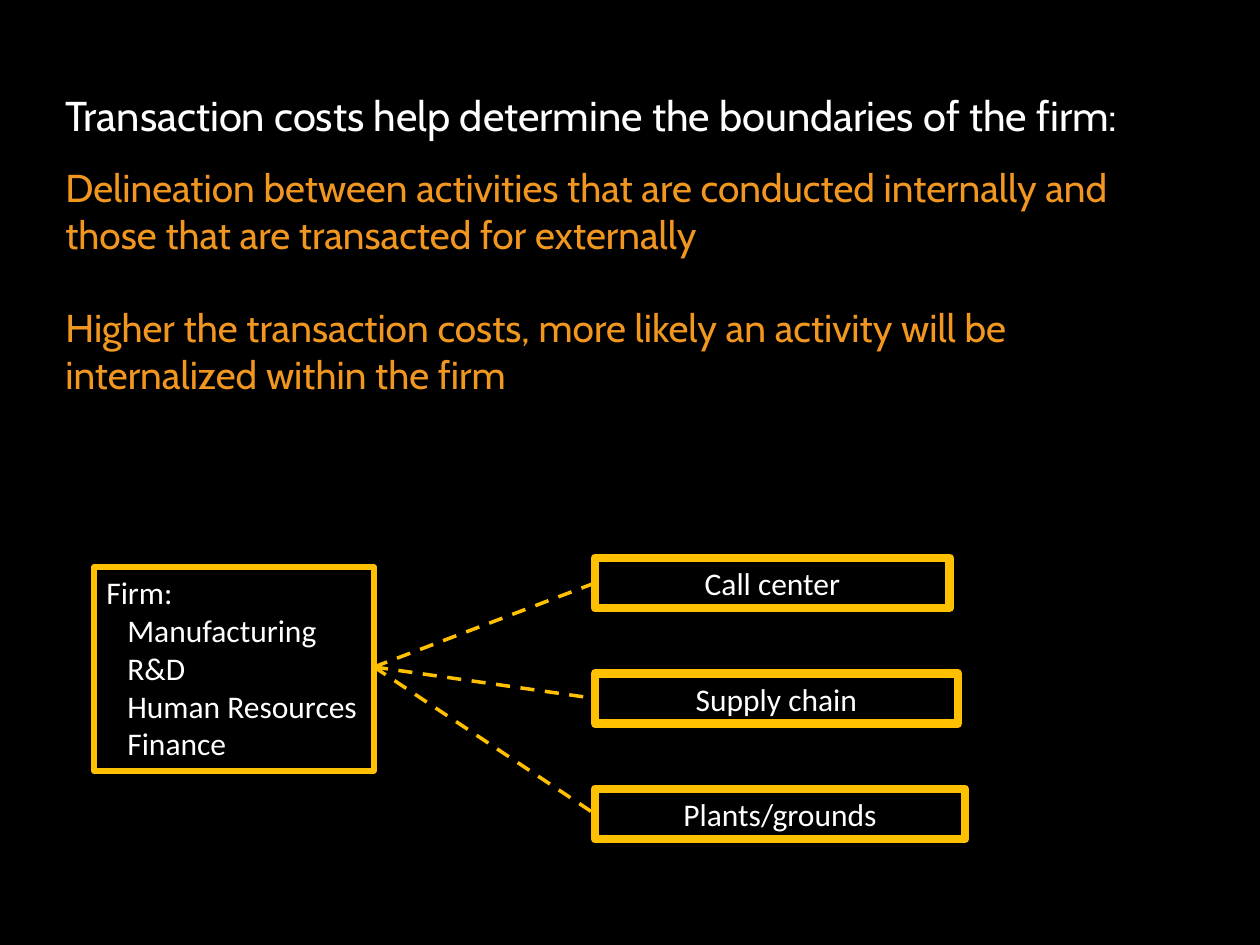
from pptx import Presentation
from pptx.dml.color import RGBColor
from pptx.enum.dml import MSO_LINE
from pptx.enum.shapes import MSO_CONNECTOR, MSO_SHAPE
from pptx.enum.text import MSO_ANCHOR, MSO_AUTO_SIZE, PP_ALIGN
from pptx.oxml.ns import qn
from pptx.util import Pt
from lxml.etree import SubElement

BLACK = RGBColor(0x00, 0x00, 0x00)
WHITE = RGBColor(0xFF, 0xFF, 0xFF)
GOLD = RGBColor(0xFF, 0xC0, 0x00)
ORANGE = RGBColor(0xF1, 0x97, 0x20)

TITLE = "Transaction costs help determine the boundaries of the firm:"
POINTS = [
    "Delineation between activities that are conducted internally and "
    "those that are transacted for externally",
    "Higher the transaction costs, more likely an activity will be "
    "internalized within the firm",
]
FIRM = ["Firm:", "Manufacturing", "R&D", "Human Resources", "Finance"]
OUTSIDE = [("Call center", 355), ("Supply chain", 363), ("Plants/grounds", 370)]

TITLE_FONT = {"name": "Cabin", "size": Pt(23.8), "color": WHITE}
POINT_FONT = {"name": "Cabin", "size": Pt(22.2), "color": ORANGE}
LABEL_FONT = {"name": "Calibri", "size": Pt(18), "color": WHITE}

TITLE_AT = (53, 84, 1155, 92)
POINTS_AT = (53, 158, 1102, 227)
FIRM_AT = (94, 567, 280, 204)
HUB = (374, 667)
LEFT, TOP, STEP, HEIGHT = 595, 558, 115.5, 50
INDENT = 21


def px(*vals):
    return [round(v * 914400 / 126) for v in vals]


def write(shape, lines, font, **frame):
    text = shape.text_frame
    for key, val in {"word_wrap": True, **frame}.items():
        setattr(text, key, val)
    text.text = "\n".join(lines)
    for para in text.paragraphs:
        for key, val in font.items():
            if key == "color":
                para.font.color.rgb = val
            else:
                setattr(para.font, key, val)
    return text.paragraphs


def add_text(slide, at, lines, font):
    return write(slide.shapes.add_textbox(*px(*at)), lines, font)


def add_box(slide, at, lines, width, align, wrap=True):
    box = slide.shapes.add_shape(MSO_SHAPE.RECTANGLE, *px(*at))
    box.shadow.inherit = False
    box.fill.background()
    box.line.color.rgb = GOLD
    box.line.width = Pt(width)
    paras = write(box, lines, LABEL_FONT, word_wrap=wrap,
                  vertical_anchor=MSO_ANCHOR.TOP,
                  auto_size=MSO_AUTO_SIZE.SHAPE_TO_FIT_TEXT)
    for para in paras:
        para.alignment = align
    return paras


def add_link(slide, start, end):
    link = slide.shapes.add_connector(MSO_CONNECTOR.STRAIGHT, *px(*start, *end))
    link.line.color.rgb = GOLD
    link.line.width = Pt(2)
    link.line.dash_style = MSO_LINE.DASH
    SubElement(link._element.spPr, qn("a:effectLst"))


def main():
    deck = Presentation()
    deck.slide_width, deck.slide_height = px(1260, 945)
    slide = deck.slides.add_slide(deck.slide_layouts[6])
    slide.background.fill.solid()
    slide.background.fill.fore_color.rgb = BLACK

    items = add_box(slide, FIRM_AT, FIRM, 3, PP_ALIGN.LEFT, wrap=False)
    for para in items[1:]:
        para._p.get_or_add_pPr().set("marL", str(px(INDENT)[0]))

    for i, (name, width) in enumerate(OUTSIDE):
        top = TOP + i * STEP
        add_box(slide, (LEFT, top, width, HEIGHT), [name], 5, PP_ALIGN.CENTER)
        add_link(slide, HUB, (LEFT, top + HEIGHT / 2))

    add_text(slide, TITLE_AT, [TITLE], TITLE_FONT)
    points = add_text(slide, POINTS_AT, POINTS, POINT_FONT)
    points[1].space_before = Pt(26.5)
    deck.save("out.pptx")


if __name__ == "__main__":
    main()
